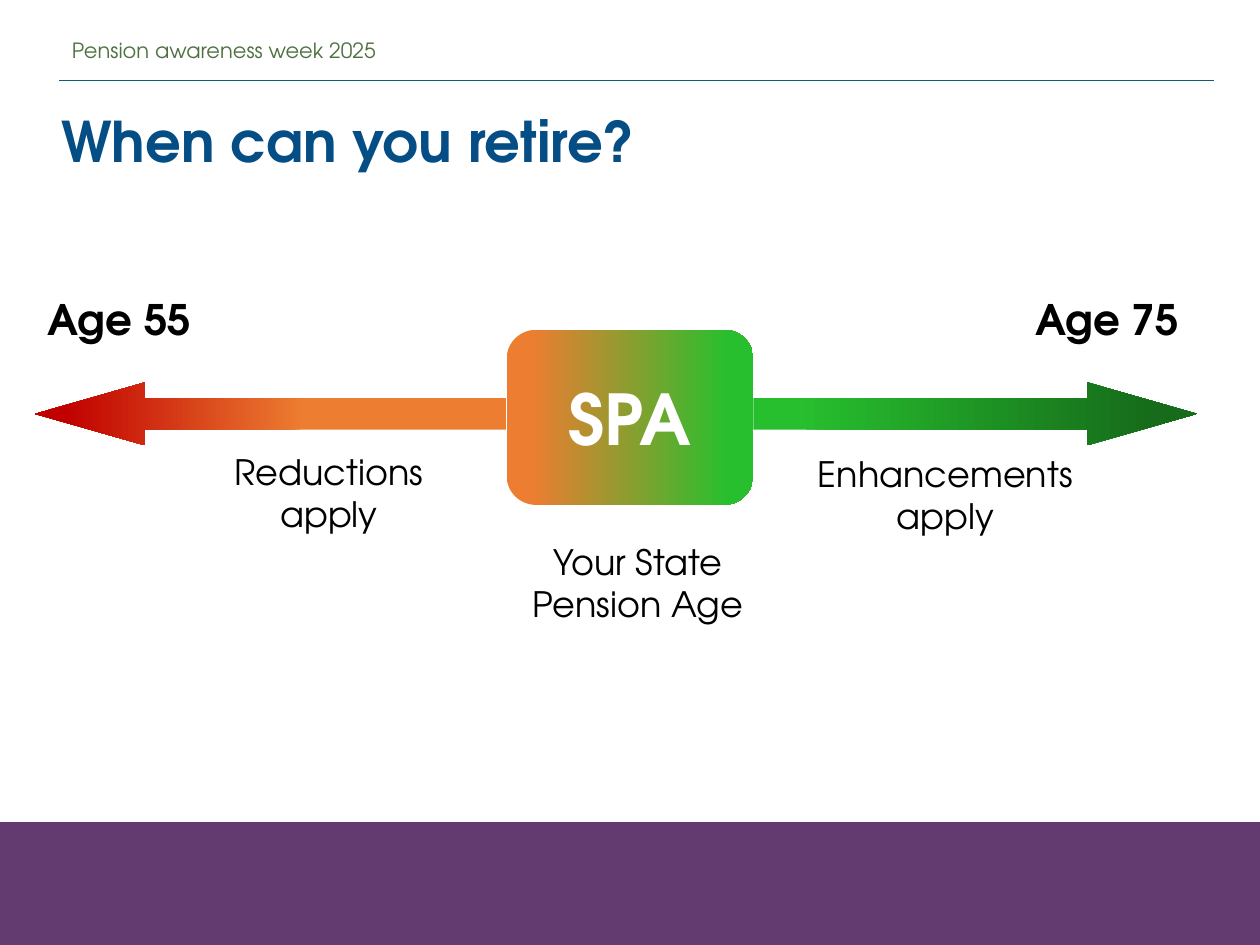
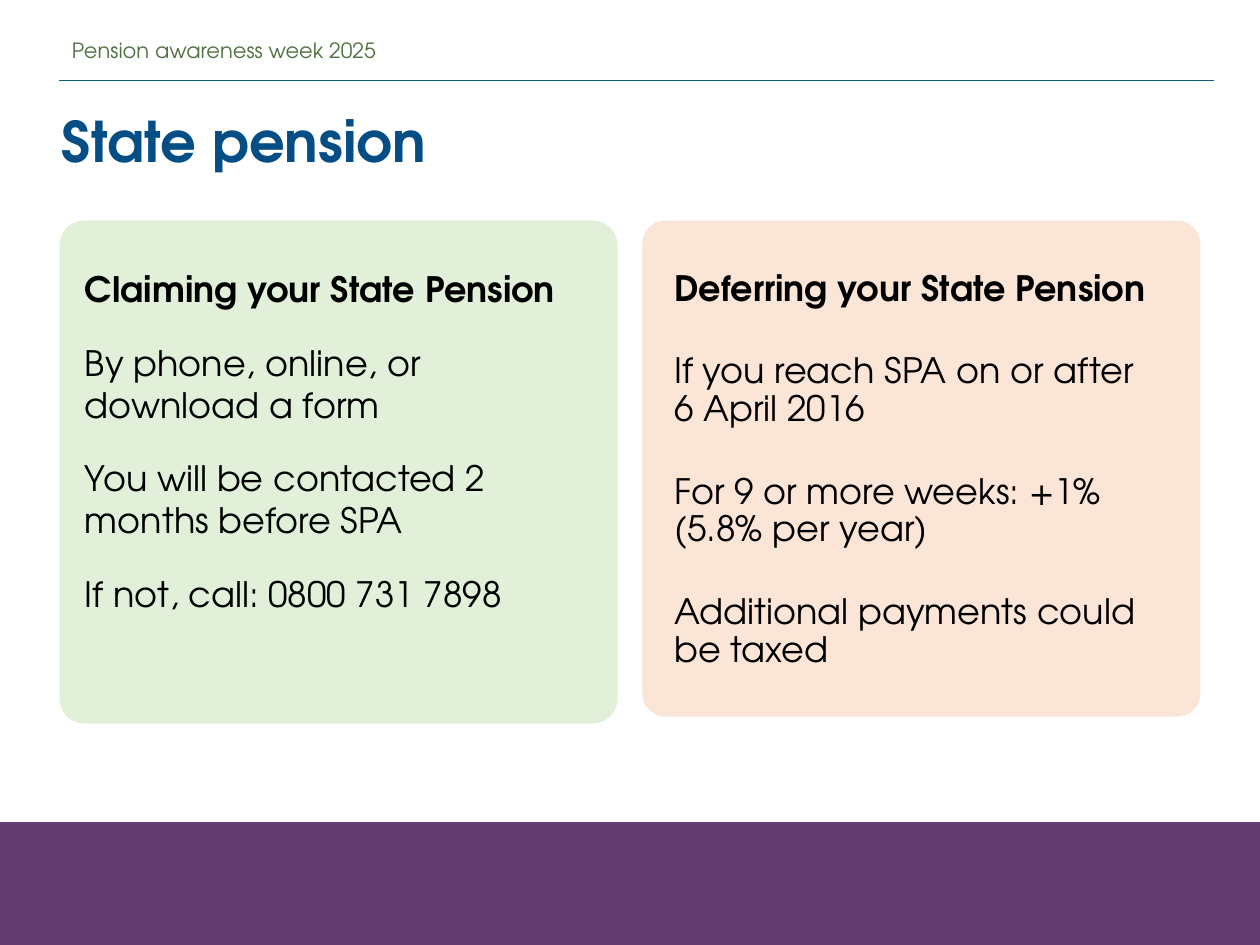
from dataclasses import dataclass

from lxml.etree import SubElement
from pptx import Presentation
from pptx.dml.color import RGBColor
from pptx.enum.shapes import MSO_CONNECTOR, MSO_SHAPE
from pptx.enum.text import MSO_ANCHOR, PP_ALIGN
from pptx.oxml.ns import qn
from pptx.util import Pt


@dataclass(frozen=True)
class Theme:
    """Colours, font and type sizes shared by the slides."""
    font: str = "TeX Gyre Adventor"
    band: str = "633B71"
    rule: str = "0B5E74"
    header: str = "4F7040"
    title: str = "044D85"
    text: str = "000000"
    white: str = "FFFFFF"
    red: str = "C00000"
    orange: str = "ED7D31"
    green: str = "27BF2E"
    dark_green: str = "166C1A"
    pale_green: str = "E2F0D9"
    pale_orange: str = "FBE5D6"
    header_size: int = 12
    body_size: int = 20
    age_size: int = 24
    title_size: int = 32
    badge_size: int = 40


class PensionDeck:
    """Holds the theme and the current slide and draws each kind of element."""

    def __init__(self, theme):
        """Start an empty 4:3 deck."""
        self.theme = theme
        self.deck = Presentation()
        self.deck.slide_width = Pt(720)
        self.deck.slide_height = Pt(540)
        self.page = None

    def add_page(self, title):
        """Add a slide with the shared band, header, rule and title."""
        theme = self.theme
        self.page = self.deck.slides.add_slide(self.deck.slide_layouts[6])
        band = self.shape(MSO_SHAPE.RECTANGLE, 0, 470, 720, 70, theme.band)
        band.line.color.rgb = RGBColor.from_string(theme.band)
        band.line.width = Pt(1)
        self.rule(34, 46, 694)
        self.label(34, 19.5, 469, 18, "Pension awareness week 2025",
                   theme.header_size, theme.header, line_spacing=0.9)
        self.label(28, 57.5, 672, 46, title, theme.title_size, theme.title, bold=True)

    def rule(self, left, top, right):
        """Draw a thin horizontal line."""
        line = self.page.shapes.add_connector(
            MSO_CONNECTOR.STRAIGHT, Pt(left), Pt(top), Pt(right), Pt(top))
        line.line.color.rgb = RGBColor.from_string(self.theme.rule)
        line.line.width = Pt(0.5)
        SubElement(line.element.spPr, qn("a:effectLst"))

    def shape(self, kind, left, top, width, height, *colours,
              stops=(0.1, 0.9), adjustments=()):
        """Draw a borderless shape with a solid or two-colour fill."""
        shape = self.page.shapes.add_shape(kind, Pt(left), Pt(top), Pt(width), Pt(height))
        shape.shadow.inherit = False
        shape.line.fill.background()
        for index, value in enumerate(adjustments):
            shape.adjustments[index] = value
        if len(colours) == 1:
            shape.fill.solid()
            shape.fill.fore_color.rgb = RGBColor.from_string(colours[0])
            return shape
        shape.fill.gradient()
        shape.fill.gradient_angle = 0
        for stop, colour, position in zip(shape.fill.gradient_stops, colours, stops):
            stop.color.rgb = RGBColor.from_string(colour)
            stop.position = position
        return shape

    def arrow(self, left, width, *colours, stops=(0.1, 0.9), rotation=0):
        """Draw a gradient arrow on the age line."""
        arrow = self.shape(MSO_SHAPE.RIGHT_ARROW, left, 218.5, width, 36, *colours,
                           stops=stops, adjustments=(0.5, 1.743))
        arrow.rotation = rotation

    def fill_text(self, shape, lines, size, colour, bold=False, align=PP_ALIGN.LEFT,
                  anchor=MSO_ANCHOR.TOP, line_spacing=1.0, before=0, after=0):
        """Put paragraphs in one style into a shape."""
        frame = shape.text_frame
        frame.word_wrap = True
        frame.vertical_anchor = anchor
        frame.text = "\n".join(lines)
        for index, para in enumerate(frame.paragraphs):
            para.alignment = align
            para.line_spacing = line_spacing
            para.space_before = Pt(before if index else 0)
            para.space_after = Pt(after)
            for span in para.runs:
                span.font.name = self.theme.font
                span.font.size = Pt(size)
                span.font.bold = bold
                span.font.color.rgb = RGBColor.from_string(colour)

    def label(self, left, top, width, height, text, size, colour, **style):
        """Add a one-paragraph text box."""
        box = self.page.shapes.add_textbox(Pt(left), Pt(top), Pt(width), Pt(height))
        self.fill_text(box, [text], size, colour, **style)

    def list_text(self, shape, lines, **style):
        """Put a bold heading and plain paragraphs into a shape."""
        self.fill_text(shape, lines, self.theme.body_size, self.theme.text,
                       after=18, **style)
        for span in shape.text_frame.paragraphs[0].runs:
            span.font.bold = True

    def card(self, left, height, colour, corner):
        """Draw a rounded card."""
        return self.shape(MSO_SHAPE.ROUNDED_RECTANGLE, left, 126, 319, height, colour,
                          adjustments=(corner,))


def build_retirement_page(slides):
    """Show the age line around State Pension Age."""
    theme = slides.theme
    slides.add_page("When can you retire?")
    slides.arrow(20, 269.5, theme.orange, theme.red, stops=(0.43, 0.94), rotation=180)
    badge = slides.shape(MSO_SHAPE.ROUNDED_RECTANGLE, 289.5, 188.5, 141, 100,
                         theme.orange, theme.green)
    slides.fill_text(badge, ["SPA"], theme.badge_size, theme.white, bold=True,
                     align=PP_ALIGN.CENTER, anchor=MSO_ANCHOR.MIDDLE)
    slides.arrow(430.5, 253.5, theme.green, theme.dark_green)
    for left, age in ((20, "Age 55"), (584.5, "Age 75")):
        slides.label(left, 164, 112, 36, age, theme.age_size, theme.text, bold=True)
    captions = (
        (101.5, 254, 173, "Reductions apply"),
        (278, 305.5, 173, "Your State Pension Age"),
        (430.5, 255, 219.5, "Enhancements apply"),
    )
    for left, top, width, caption in captions:
        slides.label(left, top, width, 55.5, caption, theme.body_size, theme.text,
                     align=PP_ALIGN.CENTER)


def build_state_pension_page(slides):
    """Compare claiming and deferring the State Pension."""
    theme = slides.theme
    slides.add_page("State pension")
    slides.card(34, 287.5, theme.pale_green, 0.05)
    claiming = slides.page.shapes.add_textbox(Pt(41.5), Pt(149.5), Pt(304.5), Pt(207.5))
    slides.list_text(claiming, [
        "Claiming your State Pension",
        "By phone, online, or\vdownload a form",
        "You will be contacted 2\vmonths before SPA",
        "If not, call: 0800 731 7898",
    ])
    deferring = slides.card(367, 283.5, theme.pale_orange, 0.047)
    frame = deferring.text_frame
    frame.margin_left = frame.margin_right = Pt(14.4)
    frame.margin_top = Pt(25)
    slides.list_text(deferring, [
        "Deferring your State Pension",
        "If you reach SPA on or after\v6 April 2016",
        "For 9 or more weeks: +1% (5.8% per year)",
        "Additional payments could be taxed",
    ], line_spacing=0.9, before=7.5)


def main():
    """Build and save the deck."""
    slides = PensionDeck(Theme())
    build_retirement_page(slides)
    build_state_pension_page(slides)
    slides.deck.save("out.pptx")


if __name__ == "__main__":
    main()
